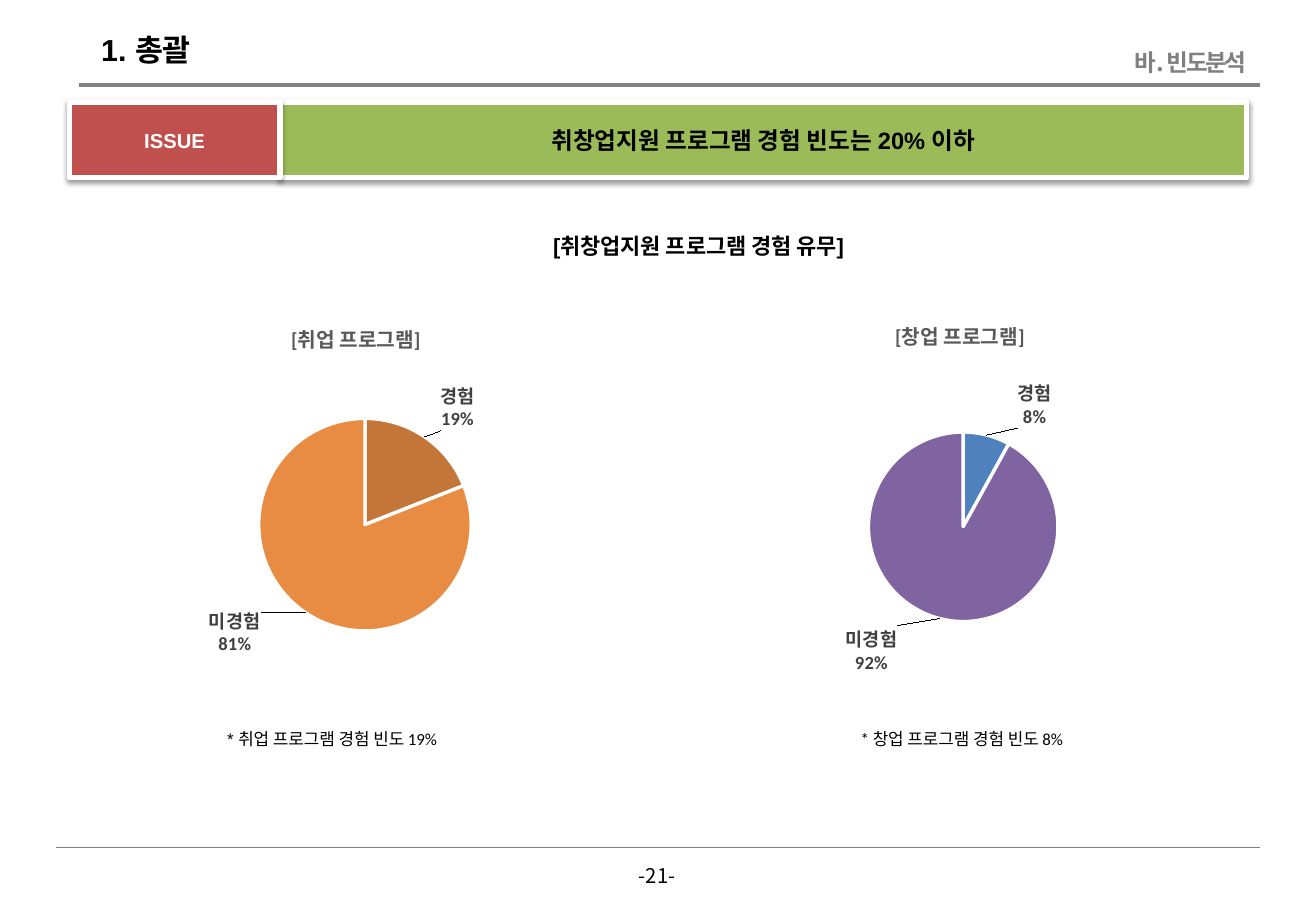
from copy import deepcopy

from lxml import etree
from pptx import Presentation, util as u
from pptx.chart.data import CategoryChartData
from pptx.dml.color import RGBColor
from pptx.enum import chart as ch, shapes, text
from pptx.oxml import parse_xml
from pptx.oxml.ns import nsdecls, qn

Pt = u.Pt
KOREAN = "Noto Sans CJK KR"
CENTER, RIGHT = text.PP_ALIGN.CENTER, text.PP_ALIGN.RIGHT


def rgb(value):
    return RGBColor.from_string(value)


def box_of(*lengths):
    return [Pt(v) for v in lengths]


def set_font(font, color="000000", **values):
    for key, value in values.items():
        setattr(font, key, value)
    font.color.rgb = rgb(color)


def write(sp, runs, size, align=None, wrap=True, spc=None, hang=0, **style):
    """Write (text, font name) runs as one paragraph, centred vertically."""
    tf = sp.text_frame
    frame = {"word_wrap": wrap, "vertical_anchor": text.MSO_ANCHOR.MIDDLE,
             "auto_size": text.MSO_AUTO_SIZE.NONE}
    for key, value in frame.items():
        setattr(tf, key, value)
    p = tf.paragraphs[0]
    p.alignment, p.space_before = align, Pt(0)
    if hang:
        p._p.get_or_add_pPr().set("marL", str(Pt(hang)))
        p._p.get_or_add_pPr().set("indent", str(-Pt(hang)))
    for words, name in runs:
        r = p.add_run()
        r.text = words
        set_font(r.font, name=name, size=Pt(size), **style)
        rPr = r._r.get_or_add_rPr()
        etree.SubElement(rPr, qn("a:ea")).set("typeface", KOREAN)
        if spc:
            rPr.set("spc", str(spc))


def add_text(s, box, runs, size, **style):
    write(s.shapes.add_textbox(*box_of(*box)), runs, size, **style)


def add_rule(s, x1, x2, y, width):
    line = s.shapes.add_connector(shapes.MSO_CONNECTOR.STRAIGHT, *box_of(x1, y, x2, y))
    line.line.color.rgb = rgb("808080")
    line.line.width = Pt(width)
    etree.SubElement(line._element.spPr, qn("a:effectLst"))


def add_header(s, x, y, w, h):
    """Title on the left, section name on the right, rule below."""
    places = [((x + 5.8, y, 73, 29), "1. 총괄", "Arial",
               {"size": 18, "wrap": False, "align": text.PP_ALIGN.LEFT}),
              ((x + w - 349, y + 10, 348, 25), "바. 빈도분석", KOREAN,
               {"size": 14, "align": RIGHT, "color": "808080", "spc": -150})]
    for sp, (box, words, name, style) in zip(s.placeholders, places):
        sp.left, sp.top, sp.width, sp.height = box_of(*box)
        write(sp, [(words, name)], bold=True, **style)
    add_rule(s, x, x + w, y + h, 2)


def add_issue_bar(s, x, y, w, h):
    """Red tag over the left end of a green message bar."""
    tag = 125
    parts = [(x + tag, w - tag, "9BBB59", "취창업지원 프로그램 경험 빈도는 20% 이하", 14, "000000"),
             (x, tag, "C0504D", "ISSUE", 12, "FFFFFF")]
    for left, width, fill, words, size, color in parts:
        sp = s.shapes.add_shape(shapes.MSO_SHAPE.RECTANGLE, *box_of(left, y, width, h))
        sp.fill.solid()
        sp.fill.fore_color.rgb = rgb(fill)
        sp.line.color.rgb = rgb("FFFFFF")
        sp.line.width = Pt(3)
        sp.shadow.inherit = False
        sp._element.spPr.find(qn("a:effectLst")).append(parse_xml(
            f'<a:outerShdw {nsdecls("a")} blurRad="{Pt(3.1)}" dist="{Pt(1.6)}" dir="5400000" '
            'rotWithShape="0"><a:srgbClr val="000000"><a:alpha val="38000"/></a:srgbClr>'
            '</a:outerShdw>'))
        write(sp, [(words, "Arial")], size, align=CENTER, bold=True, color=color)


def layout_xml(inner=False, **values):
    """Manual chart layout; x, y, w and h are fractions of the chart."""
    target = '<c:layoutTarget val="inner"/>' if inner else ""
    modes = "" if "mode" in values else '<c:xMode val="edge"/><c:yMode val="edge"/>'
    sizes = "".join(f'<c:{k} val="{v}"/>' for k, v in values.items() if k != "mode")
    return parse_xml(f'<c:layout {nsdecls("c")}><c:manualLayout>{target}{modes}{sizes}'
                     '</c:manualLayout></c:layout>')


def add_pie(s, x, y, w, h, title, values, colors, title_y, pie, shifts):
    """Pie with title; pie is its box in the chart, shifts move the labels."""
    data = CategoryChartData()
    data.categories = ["경험", "미경험"]
    data.add_series("Series 1", values)
    chart = s.shapes.add_chart(ch.XL_CHART_TYPE.PIE, *box_of(x, y, w, h), data).chart
    chart.has_legend = False
    set_font(chart.font, name="Calibri", size=Pt(10))

    # Title
    tf = chart.chart_title.text_frame
    r = tf.paragraphs[0].add_run()
    r.text = title
    set_font(r.font, "595959", name="Calibri", size=Pt(12), bold=True)
    c_title = chart.chart_title._element
    for old in c_title.findall(qn("c:layout")):
        c_title.remove(old)
    c_title.find(qn("c:tx")).addnext(layout_xml(x=0.38, y=title_y))

    # Slices
    area = chart._chartSpace.chart.plotArea
    for old in area.findall(qn("c:layout")):
        area.remove(old)
    area.insert(0, layout_xml(True, **dict(zip("xywh", pie))))
    plot = chart.plots[0]
    plot.vary_by_categories = True
    for i, color in enumerate(colors):
        fmt = plot.series[0].points[i].format
        fmt.fill.solid()
        fmt.fill.fore_color.rgb = rgb(color)
        fmt.line.color.rgb = rgb("FFFFFF")
        fmt.line.width = Pt(2)

    # Labels
    labels = plot.series[0].data_labels
    settings = {"show_percentage": True, "show_category_name": True, "show_value": False,
                "number_format": "0%", "number_format_is_linked": False,
                "position": ch.XL_LABEL_POSITION.OUTSIDE_END}
    for key, value in settings.items():
        setattr(labels, key, value)
    set_font(labels.font, "404040", name="Calibri", size=Pt(11), bold=True)
    root = labels._element
    for old in root.findall(qn("c:showLeaderLines")):
        root.remove(old)
    etree.SubElement(root, qn("c:separator")).text = "\n"
    common = list(root)
    for i, (dx, dy) in enumerate(shifts):
        label = parse_xml(f'<c:dLbl {nsdecls("c")}><c:idx val="{i}"/></c:dLbl>')
        label.append(layout_xml(mode="offset", x=dx, y=dy))
        label.extend(deepcopy(part) for part in common)
        root.insert(i, label)


def add_footer(s, x, y, w):
    add_rule(s, x, x + w, y, 0.5)
    add_text(s, (x + 338, y + 6, 37, 21), [("-21-", KOREAN)], 12, align=CENTER, wrap=False)


def main():
    prs = Presentation()
    prs.slide_width, prs.slide_height = Pt(780), Pt(540)
    s = prs.slides.add_slide(prs.slide_layouts[0])
    add_header(s, 47, 14.5, 700, 36)
    add_issue_bar(s, 41, 60.5, 698, 45)
    add_text(s, (89, 134, 650, 23), [("[취창업지원 프로그램 경험 유무]", "Arial")], 13,
             align=CENTER, bold=True)
    add_pie(s, 41, 176.5, 340.5, 234, "[취업 프로그램]", (19, 81), ("C37637", "E78C42"),
            0.05, (0.33, 0.3, 0.37, 0.55), ((0.02, 0), (-0.07, -0.03)))
    add_pie(s, 399, 179.5, 340.5, 231, "[창업 프로그램]", (8, 92), ("4F81BD", "8064A2"),
            0.03, (0.34, 0.33, 0.33, 0.49), ((0.05, 0), (-0.07, 0)))
    notes = [(127.5, [("* 취업 프로그램 경험 빈도 ", "Arial"), ("19%", "Calibri")]),
             (503, [("* 창업 프로그램 경험 빈도 8%", "Calibri")])]
    for x, runs in notes:
        add_text(s, (x, 428.5, 270, 19), runs, 10, hang=6.5)
    add_footer(s, 33, 502.5, 714)
    prs.save("out.pptx")


if __name__ == "__main__":
    main()
